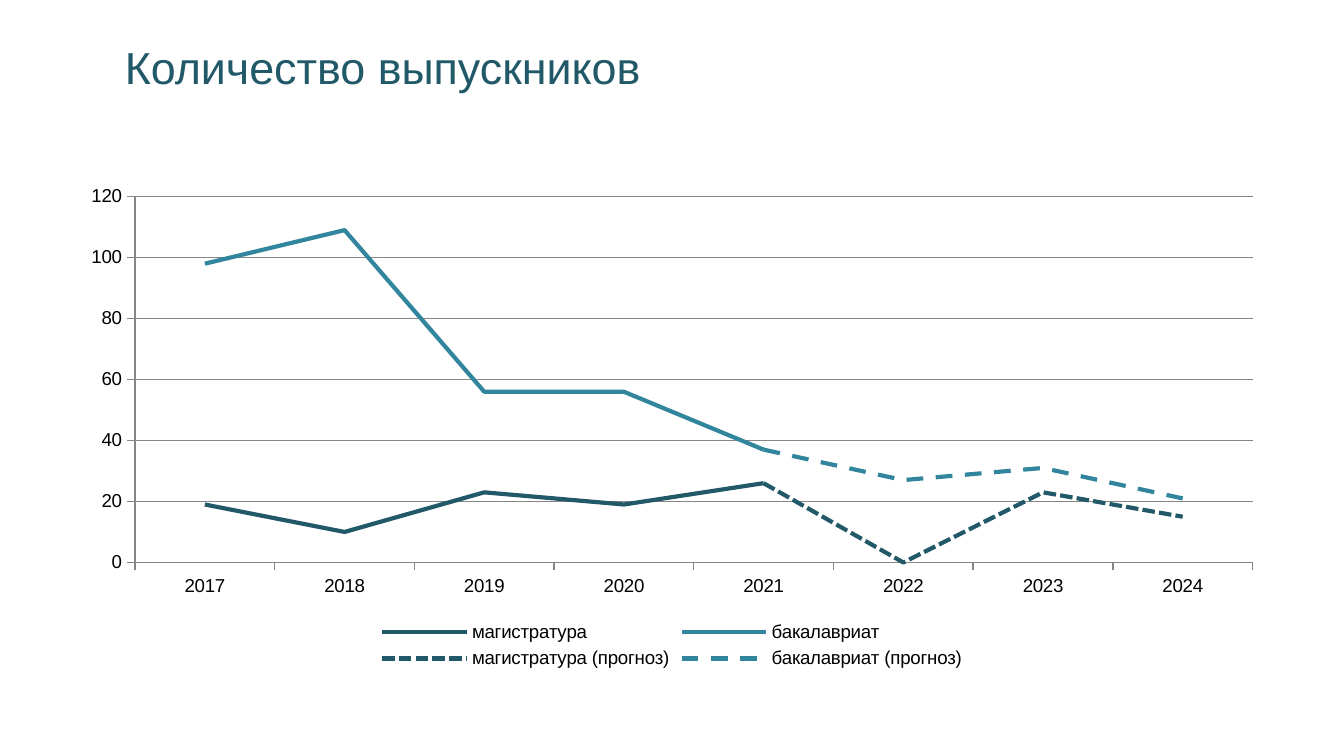
"""Build a slide with a line chart of graduate numbers and their forecast."""
from dataclasses import dataclass

from pptx import Presentation
from pptx.chart.data import CategoryChartData
from pptx.dml.color import RGBColor
from pptx.enum.chart import XL_CHART_TYPE as ChartType
from pptx.enum.chart import XL_LEGEND_POSITION as LegendPosition
from pptx.enum.chart import XL_TICK_MARK as TickMark
from pptx.enum.dml import MSO_LINE_DASH_STYLE as Dash
from pptx.enum.text import MSO_ANCHOR as Anchor
from pptx.util import Cm, Pt


@dataclass(frozen=True)
class Theme:
    face: str = "Arial"
    title_size: float = 24
    chart_size: float = 10
    series_width: float = 2.25
    grid_width: float = 0.75
    ink: str = "000000"
    grid: str = "868686"
    master: str = "215968"
    bachelor: str = "31859C"


def apply(target, formats):
    for name, value in formats.items():
        setattr(target, name, value)


class SlideBuilder:
    def __init__(self, slide, theme):
        self.slide = slide
        self.theme = theme

    def style_font(self, font, size, color):
        apply(font, {"name": self.theme.face, "size": Pt(size), "bold": False})
        font.color.rgb = RGBColor.from_string(color)

    def style_line(self, line, color, width, dash=Dash.SOLID):
        line.color.rgb = RGBColor.from_string(color)
        apply(line, {"width": Pt(width), "dash_style": dash})

    def title(self, wording, *place):
        frame = self.slide.shapes.add_textbox(*map(Cm, place)).text_frame
        apply(frame, {"word_wrap": True, "vertical_anchor": Anchor.MIDDLE})
        heading = frame.paragraphs[0]
        heading.text = wording
        self.style_font(heading.runs[0].font, self.theme.title_size, self.theme.master)

    def line_chart(self, years, trends, *place):
        theme = self.theme
        data = CategoryChartData()
        data.categories = years
        for name, counts, _, _ in trends:
            data.add_series(name, counts)
        chart = self.slide.shapes.add_chart(ChartType.LINE, *map(Cm, place), data).chart
        apply(chart, {"has_title": False, "has_legend": True})
        apply(chart.legend, {"position": LegendPosition.BOTTOM, "include_in_layout": False})
        self.style_font(chart.font, theme.chart_size, theme.ink)

        plot = chart.plots[0]
        plot.vary_by_categories = False
        for series, (_, _, color, dash) in zip(plot.series, trends):
            series.smooth = False
            self.style_line(series.format.line, color, theme.series_width, dash)

        ticks = {"major_tick_mark": TickMark.OUTSIDE, "minor_tick_mark": TickMark.NONE}
        for axis in (chart.category_axis, chart.value_axis):
            apply(axis, ticks)
            self.style_line(axis.format.line, theme.grid, theme.grid_width)
        scale = {"minimum_scale": 0, "maximum_scale": 120, "major_unit": 20}
        apply(chart.value_axis, {**scale, "has_major_gridlines": True})
        self.style_line(chart.value_axis.major_gridlines.format.line, theme.grid, theme.grid_width)


def main():
    deck = Presentation()
    apply(deck, {"slide_width": Cm(25.4), "slide_height": Cm(14.29)})
    theme = Theme()
    builder = SlideBuilder(deck.slides.add_slide(deck.slide_layouts[6]), theme)

    years = [str(year) for year in range(2017, 2025)]
    unknown = [None] * 3
    past = [None] * 4
    trends = [
        ("магистратура", [19, 10, 23, 19, 26] + unknown, theme.master, Dash.SOLID),
        ("бакалавриат", [98, 109, 56, 56, 37] + unknown, theme.bachelor, Dash.SOLID),
        ("магистратура (прогноз)", past + [26, 0, 23, 15], theme.master, Dash.SQUARE_DOT),
        ("бакалавриат (прогноз)", past + [37, 27, 31, 21], theme.bachelor, Dash.DASH),
    ]
    builder.title("Количество выпускников", 2.11, 0.58, 22.02, 1.37)
    builder.line_chart(years, trends, 1.27, 3.33, 22.86, 9.42)
    deck.save("out.pptx")


if __name__ == "__main__":
    main()
